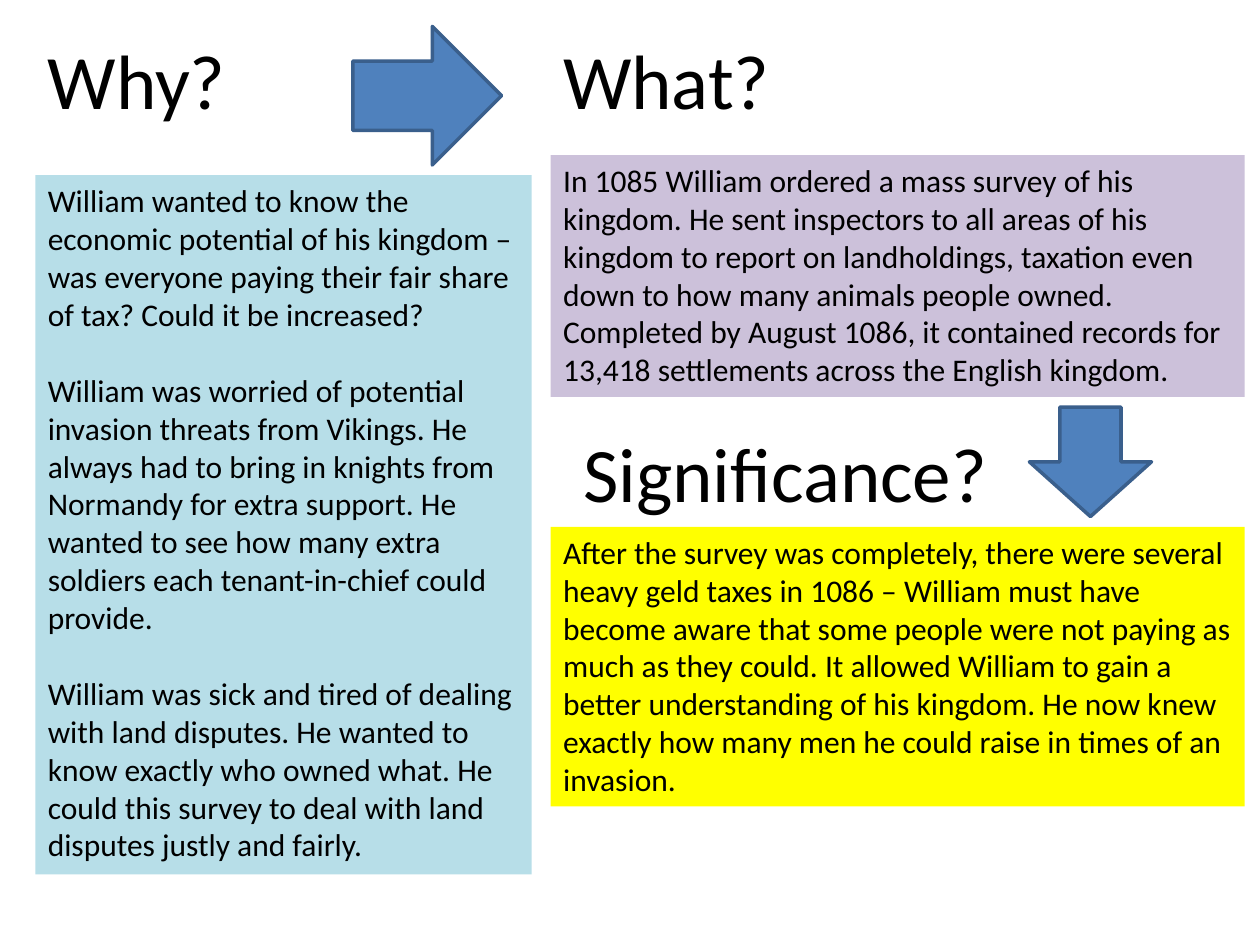
from collections import namedtuple
from pptx import Presentation
from pptx.dml.color import RGBColor
from pptx.enum.shapes import MSO_SHAPE
from pptx.enum.text import MSO_ANCHOR, MSO_AUTO_SIZE, PP_ALIGN
from pptx.util import Pt

Theme = namedtuple("Theme", "font ink blue lilac yellow arrow edge head body")
theme = Theme("Calibri", "000000", "B7DEE8", "CCC1DA", "FFFF00", "4F81BD", "3A5F8C", 44, 18)

deck = Presentation()
deck.slide_width, deck.slide_height = Pt(720), Pt(540)
slide = deck.slides.add_slide(deck.slide_layouts[6])


def paint(shape, color):
    shape.shadow.inherit = False
    shape.fill.solid()
    shape.fill.fore_color.rgb = RGBColor.from_string(color)


def write(shape, texts, size):
    frame = shape.text_frame
    frame.word_wrap = True
    frame.auto_size = MSO_AUTO_SIZE.SHAPE_TO_FIT_TEXT
    frame.vertical_anchor = MSO_ANCHOR.TOP
    for i, text in enumerate(texts):
        para = frame.add_paragraph() if i else frame.paragraphs[0]
        para.alignment = PP_ALIGN.LEFT
        para.space_before = Pt(22 if i else 0)
        run = para.add_run()
        run.text = text
        run.font.name = theme.font
        run.font.size = Pt(size)
        run.font.color.rgb = RGBColor.from_string(theme.ink)


left, right, top = 20.2, 314.7, 15.1
wide = 396.6

why = [
    "William wanted to know the economic potential of his kingdom – was everyone paying their fair share of tax? Could it be increased?",
    "William was worried of potential invasion threats from Vikings. He always had to bring in knights from Normandy for extra support. He wanted to see how many extra soldiers each tenant-in-chief could provide.",
    "William was sick and tired of dealing with land disputes. He wanted to know exactly who owned what. He could this survey to deal with land disputes justly and fairly.",
]
what = ["In 1085 William ordered a mass survey of his kingdom. He sent inspectors to all areas of his kingdom to report on landholdings, taxation even down to how many animals people owned. Completed by August 1086, it contained records for 13,418 settlements across the English kingdom."]
impact = ["After the survey was completely, there were several heavy geld taxes in 1086 – William must have become aware that some people were not paying as much as they could. It allowed William to gain a better understanding of his kingdom. He now knew exactly how many men he could raise in times of an invasion."]

panels = [
    (left, 100.1, 283.6, 399.6, theme.blue, why),
    (right, 88.6, wide, 138.2, theme.lilac, what),
    (right, 301, wide, 159.8, theme.yellow, impact),
]
for x, y, w, h, color, texts in panels:
    panel = slide.shapes.add_shape(MSO_SHAPE.RECTANGLE, Pt(x), Pt(y), Pt(w), Pt(h))
    paint(panel, color)
    panel.line.fill.background()
    write(panel, texts, theme.body)

heads = [
    (left, top, 124.6, "Why?"),
    (right, top, 153.4, "What?"),
    (326.2, 239.8, 260.6, "Significance?"),
]
for x, y, w, text in heads:
    head = slide.shapes.add_textbox(Pt(x), Pt(y), Pt(w), Pt(60.5))
    write(head, [text], theme.head)

arrows = [(201.6, top, 85, 79.2, 0), (591.8, 229, 62.6, 69.8, 90)]
for x, y, w, h, turn in arrows:
    arrow = slide.shapes.add_shape(MSO_SHAPE.RIGHT_ARROW, Pt(x), Pt(y), Pt(w), Pt(h))
    paint(arrow, theme.arrow)
    arrow.line.color.rgb = RGBColor.from_string(theme.edge)
    arrow.line.width = Pt(2)
    arrow.rotation = turn

deck.save("out.pptx")
